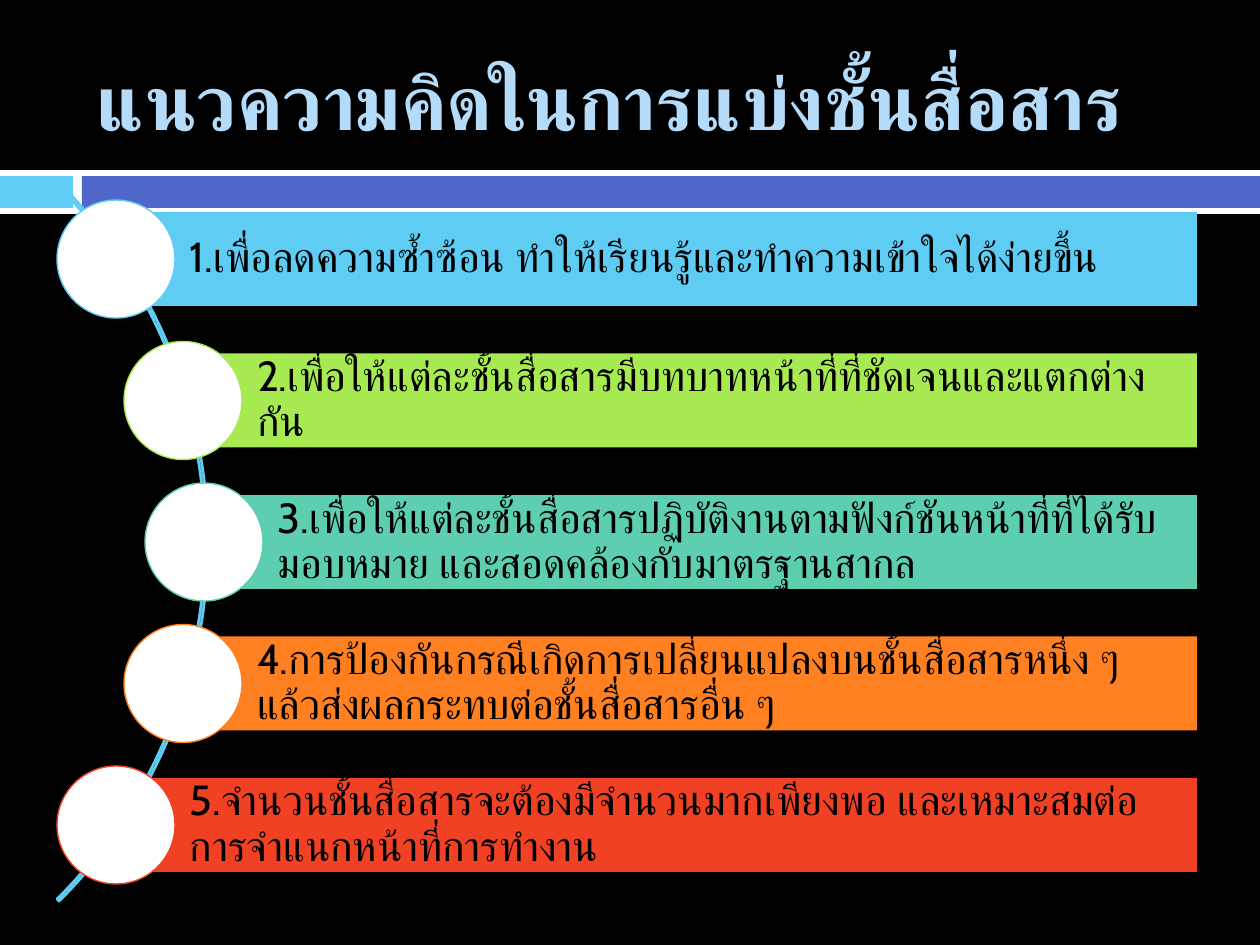
import pptx
import pptx.util
import pptx.dml.color
import pptx.enum.shapes
import pptx.enum.text

SCALE = 914400 / 126
SHAPE = pptx.enum.shapes.MSO_SHAPE
ACCENT = "5ECCF3"
ITEMS = [
    (116, ACCENT, "1.เพื่อลดความซ้ำซ้อน ทำให้เรียนรู้และทำความเข้าใจได้ง่ายขึ้น"),
    (183, "A7EA52", "2.เพื่อให้แต่ละชั้นสื่อสารมีบทบาทหน้าที่ที่ชัดเจนและแตกต่างกัน"),
    (204, "5DCEAF", "3.เพื่อให้แต่ละชั้นสื่อสารปฏิบัติงานตามฟังก์ชันหน้าที่ที่ได้รับมอบหมาย และสอดคล้องกับมาตรฐานสากล"),
    (183, "FF8021", "4.การป้องกันกรณีเกิดการเปลี่ยนแปลงบนชั้นสื่อสารหนึ่ง ๆ แล้วส่งผลกระทบต่อชั้นสื่อสารอื่น ๆ"),
    (116, "F14124", "5.จำนวนชั้นสื่อสารจะต้องมีจำนวนมากเพียงพอ และเหมาะสมต่อการจำแนกหน้าที่การทำงาน"),
]


def px(n):
    """Turn px into EMU."""
    return pptx.util.Emu(round(n * SCALE))


def rgb(value):
    """Turn a hex string into a colour."""
    return pptx.dml.color.RGBColor.from_string(value)


def add_shape(s, kind, box, fill=None, line=None, width=1):
    """Add a preset shape with a plain fill and outline."""
    sp = s.shapes.add_shape(kind, *map(px, box))
    sp.shadow.inherit = False
    if fill:
        sp.fill.solid()
        sp.fill.fore_color.rgb = rgb(fill)
    else:
        sp.fill.background()
    if line:
        sp.line.color.rgb = rgb(line)
        sp.line.width = pptx.util.Pt(width)
    else:
        sp.line.fill.background()
    return sp


def set_text(sp, text, size, color, bold=False, spacing=None, insets=(13, 6, 13, 6)):
    """Write one left-aligned, vertically centred paragraph."""
    tf = sp.text_frame
    tf.word_wrap = True
    tf.auto_size = pptx.enum.text.MSO_AUTO_SIZE.NONE
    tf.vertical_anchor = pptx.enum.text.MSO_ANCHOR.MIDDLE
    tf.margin_left, tf.margin_top, tf.margin_right, tf.margin_bottom = map(px, insets)
    p = tf.paragraphs[0]
    p.alignment = pptx.enum.text.PP_ALIGN.LEFT
    p.line_spacing = spacing
    r = p.add_run()
    r.text = text
    r.font.name = "Cabin"
    r.font.size = pptx.util.Pt(size)
    r.font.bold = bold
    r.font.color.rgb = rgb(color)


def add_band(s, x, y, w, h):
    """Draw the white band with its two coloured strips."""
    add_shape(s, SHAPE.RECTANGLE, (x, y, w, h), "FFFFFF")
    add_shape(s, SHAPE.RECTANGLE, (x, y + 6, 73, h - 12), ACCENT)
    add_shape(s, SHAPE.RECTANGLE, (x + 82, y + 6, w - 82, h - 12), "4E67C8")


def add_title(s, x, y, w, h):
    """Place and fill the title placeholder."""
    sp = s.shapes.title
    sp.left, sp.top, sp.width, sp.height = map(px, (x, y, w, h))
    set_text(sp, "แนวความคิดในการแบ่งชั้นสื่อสาร", 44, "B4DCFA", bold=True)


def add_list(s, x, y, w, h):
    """Draw the arc and the bars with circles spread evenly down the box."""
    bar, circle, arc = 94, 118, 1016
    right = x + w
    arc_box = (208 - arc, y + (h - arc) / 2, arc, arc)
    sp = add_shape(s, SHAPE.BLOCK_ARC, arc_box, line=ACCENT, width=1.5)
    for i, value in enumerate((189, 27, 0.003)):
        sp.adjustments[i] = value
    step = (h - circle) / (len(ITEMS) - 1)
    for i, (left, color, text) in enumerate(ITEMS):
        top = y + i * step
        box = (left, top + (circle - bar) / 2, right - left, bar)
        sp = add_shape(s, SHAPE.RECTANGLE, box, color)
        set_text(sp, text, 24, "000000", spacing=0.9, insets=(74, 9, 9, 9))
        box = (left - circle / 2, top, circle, circle)
        add_shape(s, SHAPE.OVAL, box, "FFFFFF", color, 0.79)


def main():
    """Build and save the slide."""
    prs = pptx.Presentation()
    prs.slide_width, prs.slide_height = px(1260), px(945)
    s = prs.slides.add_slide(prs.slide_layouts[5])
    s.background.fill.solid()
    s.background.fill.fore_color.rgb = rgb("000000")
    add_band(s, 0, 170, 1260, 44)
    add_title(s, 84, 32, 1124, 136)
    add_list(s, 57, 200, 1140, 684)
    prs.save("out.pptx")


if __name__ == "__main__":
    main()
